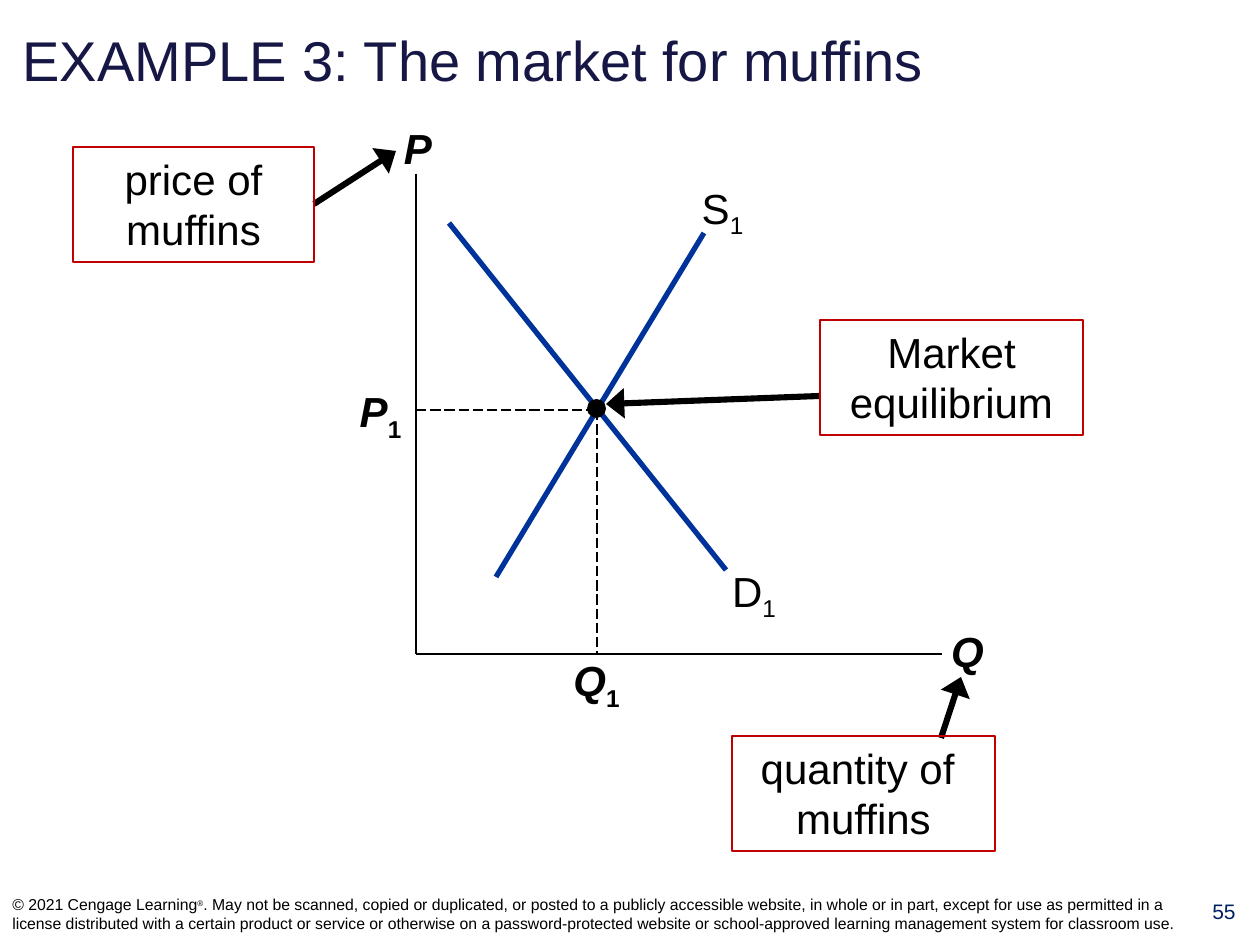
import pptx
import pptx.dml.color
import pptx.enum.dml
import pptx.enum.shapes
import pptx.enum.text
import pptx.oxml.ns
import pptx.util
from lxml import etree

BLACK = pptx.dml.color.RGBColor(0x00, 0x00, 0x00)
NAVY = pptx.dml.color.RGBColor(0x17, 0x17, 0x45)
NUMBER_BLUE = pptx.dml.color.RGBColor(0x00, 0x20, 0x60)
CURVE_BLUE = pptx.dml.color.RGBColor(0x00, 0x33, 0x99)
RED = pptx.dml.color.RGBColor(0xC0, 0x00, 0x00)

ALIGN = pptx.enum.text.PP_ALIGN
ANCHOR = pptx.enum.text.MSO_ANCHOR
SHAPE = pptx.enum.shapes.MSO_SHAPE
PX_PER_INCH = 126
COPYRIGHT = (
    "© 2021 Cengage Learning",
    "®",
    ". May not be scanned, copied or duplicated, or posted to a publicly accessible "
    "website, in whole or in part, except for use as permitted in a license distributed "
    "with a certain product or service or otherwise on a password-protected website or "
    "school-approved learning management system for classroom use.",
)


def px(*lengths):
    return [pptx.util.Emu(round(length * 914400 / PX_PER_INCH)) for length in lengths]


def format_span(span, size, color=BLACK, bold=False, italic=False, baseline=0):
    span.font.name = "Arial"
    span.font.size = pptx.util.Pt(size)
    span.font.color.rgb = color
    span.font.bold = bold
    span.font.italic = italic
    if baseline:
        span._r.get_or_add_rPr().set("baseline", str(baseline * 1000))


def set_frame(frame, anchor=ANCHOR.TOP, inset=None):
    frame.word_wrap = True
    frame.auto_size = pptx.enum.text.MSO_AUTO_SIZE.NONE
    frame.vertical_anchor = anchor
    if inset is not None:
        frame.margin_left = frame.margin_right = inset
        frame.margin_top = frame.margin_bottom = inset


def add_title(page, text):
    title = page.shapes.title
    title.left, title.top, title.width, title.height = px(10, 14, 1228, 91)
    set_frame(title.text_frame, ANCHOR.MIDDLE)
    para = title.text_frame.paragraphs[0]
    para.text = text
    para.alignment = ALIGN.LEFT
    format_span(para.runs[0], 32, NAVY)


def add_text(page, place, text, size, color=BLACK):
    box = page.shapes.add_textbox(*px(*place))
    set_frame(box.text_frame)
    para = box.text_frame.paragraphs[0]
    para.text = text
    para.alignment = ALIGN.CENTER
    format_span(para.runs[0], size, color)


def add_label(page, place, letter, subscript="", strong=False, inset=None):
    box = page.shapes.add_textbox(*px(*place))
    set_frame(box.text_frame, inset=inset)
    para = box.text_frame.paragraphs[0]
    para.text = letter
    para.alignment = ALIGN.CENTER
    format_span(para.runs[0], 24, bold=strong, italic=strong)
    if subscript:
        span = para.add_run()
        span.text = subscript
        format_span(span, 24, bold=strong, baseline=-25)


def add_line(page, ends, width, color=BLACK, dashed=False, arrow=False):
    line = page.shapes.add_connector(pptx.enum.shapes.MSO_CONNECTOR.STRAIGHT, *px(*ends))
    line.line.color.rgb = color
    line.line.width = pptx.util.Pt(width)
    if dashed:
        line.line.dash_style = pptx.enum.dml.MSO_LINE.LONG_DASH
    if arrow:
        etree.SubElement(line.line._get_or_add_ln(), pptx.oxml.ns.qn("a:tailEnd"),
                         type="triangle", w="lg", len="med")
    etree.SubElement(line._element.spPr, pptx.oxml.ns.qn("a:effectLst"))


def add_callout(page, place, text, arrow_ends):
    add_line(page, arrow_ends, 3.5, arrow=True)
    box = page.shapes.add_shape(SHAPE.RECTANGLE, *px(*place))
    box.shadow.inherit = False
    box.fill.background()
    box.line.color.rgb = RED
    box.line.width = pptx.util.Pt(0.75)
    set_frame(box.text_frame)
    para = box.text_frame.paragraphs[0]
    para.text = text
    para.alignment = ALIGN.CENTER
    for span in para.runs:
        format_span(span, 24)


def add_dot(page, place):
    dot = page.shapes.add_shape(SHAPE.OVAL, *px(*place))
    dot.shadow.inherit = False
    dot.fill.solid()
    dot.fill.fore_color.rgb = BLACK
    dot.line.fill.background()


def add_copyright(page):
    box = page.shapes.add_textbox(*px(0, 882, 1197, 63))
    set_frame(box.text_frame, ANCHOR.MIDDLE)
    para = box.text_frame.paragraphs[0]
    for text, size, baseline in zip(COPYRIGHT, (9, 8, 9), (0, 30, 0)):
        span = para.add_run()
        span.text = text
        format_span(span, size, baseline=baseline)


def main():
    deck = pptx.Presentation()
    deck.slide_width, deck.slide_height = px(1260, 945)
    page = deck.slides.add_slide(deck.slide_layouts[5])

    add_title(page, "EXAMPLE 3: The market for muffins")
    add_text(page, (1188, 892, 72, 52), "55", 12, NUMBER_BLUE)

    add_line(page, (416, 174, 416, 654), 1)
    add_line(page, (416, 654, 942, 654), 1)
    add_label(page, (389, 116, 58, 63), "P", strong=True)
    add_label(page, (936, 619, 63, 63), "Q", strong=True)

    add_line(page, (449, 223, 726, 570), 3, CURVE_BLUE)
    add_label(page, (716, 559, 76, 63), "D", "1")
    add_line(page, (496, 577, 704, 233), 3, CURVE_BLUE)
    add_label(page, (683, 176, 79, 63), "S", "1")

    add_label(page, (347, 386, 67, 50), "P", "1", strong=True, inset=0)
    add_dot(page, (587, 399, 19, 19))
    add_line(page, (416, 410, 597, 410), 0.75, dashed=True)
    add_line(page, (597, 410, 597, 654), 0.75, dashed=True)
    add_label(page, (563, 655, 67, 50), "Q", "1", strong=True, inset=0)

    add_callout(page, (73, 147, 241, 115), "price of muffins", (314, 204, 396, 151))
    add_callout(page, (732, 736, 263, 115), "quantity of \vmuffins", (941, 738, 961, 677))
    add_callout(page, (820, 320, 263, 115), "Market equilibrium", (820, 396, 606, 404))
    add_copyright(page)

    deck.save("out.pptx")


if __name__ == "__main__":
    main()
